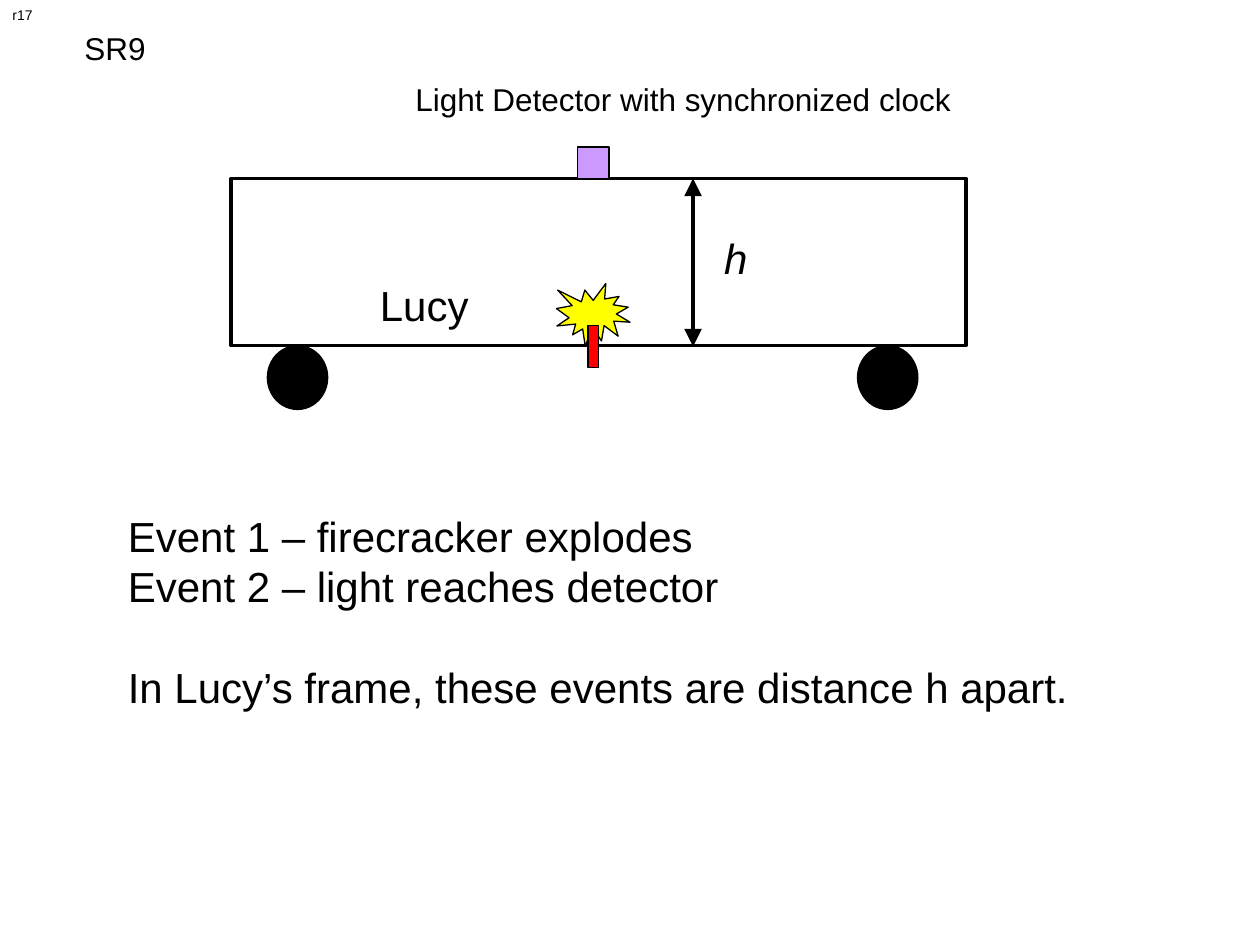
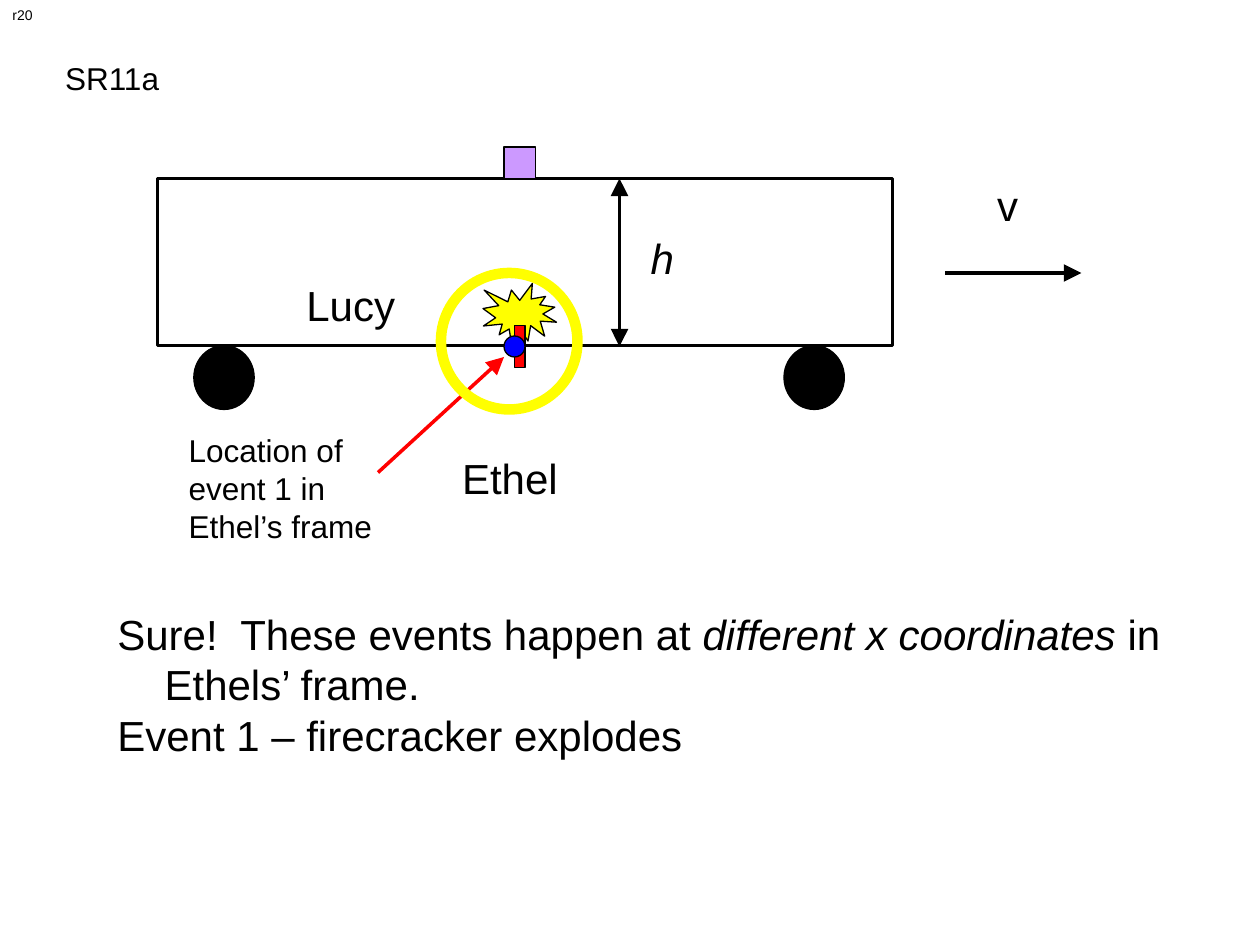
from lxml import etree
from pptx import Presentation
from pptx.dml.color import RGBColor
from pptx.enum.shapes import MSO_CONNECTOR, MSO_SHAPE
from pptx.enum.text import MSO_ANCHOR, MSO_AUTO_SIZE, PP_ALIGN
from pptx.oxml.ns import qn
from pptx.util import Pt

COLORS = {
    "black": "000000",
    "red": "FF0000",
    "yellow": "FFFF00",
    "blue": "0000FF",
    "violet": "CC99FF",
}
FONT = "Arial"
BODY, LABEL, TINY = 24, 18, 8

# Vertical layout of the train, shared by both slides
ROOF, FLOOR = 102, 197.5


def color(name):
    return RGBColor.from_string(COLORS[name])


def format_text(tf, size, italic=False):
    for p in tf.paragraphs:
        p.alignment = PP_ALIGN.LEFT
        for r in p.runs:
            r.font.name = FONT
            r.font.size = Pt(size)
            r.font.italic = italic
            r.font.color.rgb = color("black")


def add_text(s, text, x, y, w, h, size=BODY, wrap=False, italic=False):
    tf = s.shapes.add_textbox(Pt(x), Pt(y), Pt(w), Pt(h)).text_frame
    tf.word_wrap = wrap
    tf.text = text
    format_text(tf, size, italic)
    return tf


def add_shape(s, kind, x, y, w, h, fill=None, line="black", width=0.75):
    sp = s.shapes.add_shape(kind, Pt(x), Pt(y), Pt(w), Pt(h))
    sp.shadow.inherit = False
    if fill:
        sp.fill.solid()
        sp.fill.fore_color.rgb = color(fill)
    else:
        sp.fill.background()
    sp.line.color.rgb = color(line)
    sp.line.width = Pt(width)
    return sp


def add_arrow(s, x1, y1, x2, y2, line="black", double=False):
    c = s.shapes.add_connector(MSO_CONNECTOR.STRAIGHT, Pt(x1), Pt(y1), Pt(x2), Pt(y2))
    c.line.color.rgb = color(line)
    c.line.width = Pt(2)
    ln = c.line._get_or_add_ln()
    for end in ("a:headEnd", "a:tailEnd") if double else ("a:tailEnd",):
        etree.SubElement(ln, qn(end), type="triangle", w="lg", len="lg")
    etree.SubElement(c._element.spPr, qn("a:effectLst"))
    return c


def add_slide(prs, title, x, y, number):
    s = prs.slides.add_slide(prs.slide_layouts[5])
    sp = s.shapes.title
    sp.left, sp.top, sp.width, sp.height = Pt(x), Pt(y), Pt(120), Pt(29)
    tf = sp.text_frame
    tf.text = title
    tf.word_wrap = True
    tf.auto_size = MSO_AUTO_SIZE.NONE
    tf.vertical_anchor = MSO_ANCHOR.TOP
    format_text(tf, LABEL)
    add_text(s, number, 0, 0, 26, 17, TINY)
    return s


def add_train(s, x):
    """Lucy's car with firecracker, detector and height arrow; x is its left side."""
    for dx in (20.75, 358):
        add_shape(s, MSO_SHAPE.OVAL, x + dx, FLOOR, 34.5, 36.5, "black")
    add_shape(s, MSO_SHAPE.RECTANGLE, x, ROOF, 420, FLOOR - ROOF, width=2)
    add_text(s, "Lucy", x + 78, 156, 65.5, 36)
    # Firecracker and its flash
    add_shape(s, MSO_SHAPE.EXPLOSION1, x + 186, 162, 42, 36, "yellow")
    add_shape(s, MSO_SHAPE.RECTANGLE, x + 204, 186, 6, 24, "red")
    # Detector on the roof
    add_shape(s, MSO_SHAPE.RECTANGLE, x + 198, ROOF - 18, 18, 18, "violet")
    # Height of the car
    add_arrow(s, x + 264, FLOOR + 0.5, x + 264, ROOF, double=True)
    add_text(s, "h", x + 274.75, 129.25, 28, 36, italic=True)


def build_lucy_frame(prs):
    s = add_slide(prs, "SR9", 41, 13, "r17")
    add_train(s, 132)
    add_text(s, "Light Detector with synchronized clock", 230.25, 42, 323, 29, LABEL)
    tf = add_text(
        s,
        "Event 1 – firecracker explodes\n"
        "Event 2 – light reaches detector\n"
        "In Lucy’s frame, these events are distance h apart.",
        66, 288, 601, 124, wrap=True)
    tf.paragraphs[2].space_before = Pt(28.8)


def build_ethel_frame(prs):
    s = add_slide(prs, "SR11a", 30, 30, "r20")
    add_train(s, 90)
    # Velocity of the train
    add_arrow(s, 540, 156, 618, 156)
    add_text(s, "v", 562.75, 99.25, 27, 36)
    add_text(s, "Ethel", 257, 255, 69, 36)

    # Explanation with hanging indents
    tf = add_text(s, "", 60, 344.25, 618, 117, wrap=True)
    p = tf.paragraphs[0]
    for text in ("Sure!  These events happen at ", "different x coordinates",
                 " in Ethels’ frame."):
        p.add_run().text = text
    tf.add_paragraph().text = "Event 1 – firecracker explodes"
    format_text(tf, BODY)
    p.runs[1].font.italic = True
    for p in tf.paragraphs:
        pPr = p._p.get_or_add_pPr()
        pPr.set("marL", str(Pt(27)))
        pPr.set("indent", str(-Pt(27)))

    # Location of event 1 and the spreading light
    add_text(s, "Location of event 1 in Ethel’s frame", 100.75, 242.75, 145, 72, LABEL, wrap=True)
    add_arrow(s, 216, 270, 288, 204, "red")
    add_shape(s, MSO_SHAPE.OVAL, 288, 192, 12, 12, "blue")
    add_shape(s, MSO_SHAPE.OVAL, 252, 156, 78, 78, line="yellow", width=6)


def main():
    prs = Presentation()
    prs.slide_width, prs.slide_height = Pt(720), Pt(540)
    build_lucy_frame(prs)
    build_ethel_frame(prs)
    prs.save("out.pptx")


if __name__ == "__main__":
    main()
